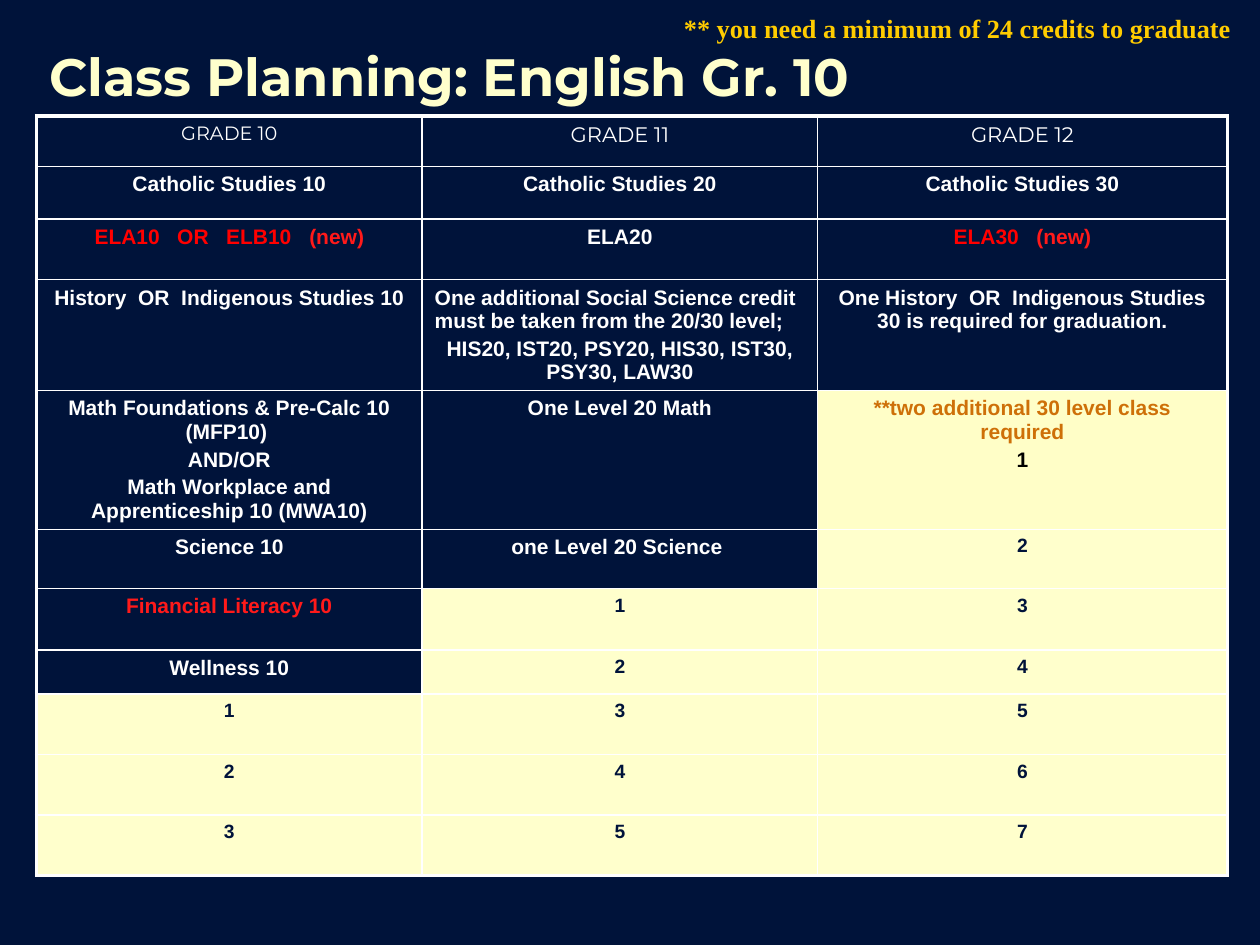
from lxml.etree import SubElement
from pptx import Presentation
from pptx.dml.color import RGBColor
from pptx.enum.text import MSO_ANCHOR, PP_ALIGN
from pptx.oxml.ns import qn
from pptx.util import Inches, Pt

NAVY, CREAM, PALE = "00133A", "FFFFCC", "FFFEC7"
WHITE, RED, BRIGHT_RED = "FFFFFF", "FF0000", "FF1A1A"
ORANGE, GOLD, BLACK = "CE7008", "FFCC00", "000000"

COLUMN_WIDTHS = [3.06, 3.14, 3.25]
ROW_HEIGHTS = [0.4, 0.42, 0.48, 0.88, 1.1, 0.47, 0.49, 0.35, 0.48, 0.48, 0.48]
GRADES = ["GRADE 10", "GRADE 11", "GRADE 12"]

# Required courses, one list per grade. A cell is a string or a list of
# paragraphs; a paragraph is a string or a list of (text, colour) spans.
COURSES = [
    ["Catholic Studies 10",
     [[("ELA10   OR   ELB10   ", RED), ("(new)", BRIGHT_RED)]],
     "History  OR  Indigenous Studies 10",
     ["Math Foundations & Pre-Calc 10 (MFP10)\u00a0", "AND/OR",
      "Math Workplace and Apprenticeship 10 (MWA10)"],
     "Science 10",
     [[("Financial Literacy 10", BRIGHT_RED)]],
     "Wellness 10"],
    ["Catholic Studies 20",
     "ELA20",
     ["One additional Social Science credit must be taken from the 20/30 level;",
      "HIS20, IST20, PSY20, HIS30, IST30, PSY30, LAW30"],
     "One Level 20 Math",
     "one Level 20 Science "],
    ["Catholic Studies 30",
     [[("ELA30   ", RED), ("(new)", BRIGHT_RED)]],
     "One History  OR  Indigenous Studies 30 is required for graduation.",
     [[("**two additional 30 level class required", ORANGE)], [("1", BLACK)]]],
]
FIRST_ELECTIVES = [1, 1, 2]  # the first Grade 12 elective shares a course cell


def color(value):
    return RGBColor.from_string(value)


def style_span(span, size, font, ink, bold=True):
    span.font.size = Pt(size)
    span.font.name = font
    span.font.bold = bold
    span.font.color.rgb = color(ink)


def space_before(para, percent):
    spacing = SubElement(para._p.get_or_add_pPr(), qn("a:spcBef"))
    SubElement(spacing, qn("a:spcPct"), val=str(percent * 1000))


def set_borders(cell, row, column):
    """Thin inner lines, thick lines along the outside of the table."""
    outer = {"lnL": column == 0, "lnR": column == len(COLUMN_WIDTHS) - 1,
             "lnT": row == 0, "lnB": row == len(ROW_HEIGHTS) - 1}
    properties = cell._tc.get_or_add_tcPr()
    for side, is_outer in outer.items():
        line = SubElement(properties, qn(f"a:{side}"), w=str(Pt(2.25 if is_outer else 1)))
        fill = SubElement(line, qn("a:solidFill"))
        SubElement(fill, qn("a:srgbClr"), val=WHITE)


def fill_cell(cell, content, size=12, font="Arial", ink=WHITE, bold=True, back=None):
    if back:
        cell.fill.solid()
        cell.fill.fore_color.rgb = color(back)
    else:
        cell.fill.background()
    frame = cell.text_frame
    paragraphs = [content] if isinstance(content, str) else content
    for index, spans in enumerate(paragraphs):
        para = frame.paragraphs[0] if index == 0 else frame.add_paragraph()
        para.alignment = PP_ALIGN.CENTER
        space_before(para, 20)
        for text, span_ink in [(spans, ink)] if isinstance(spans, str) else spans:
            span = para.add_run()
            span.text = text
            style_span(span, size, font, span_ink, bold)


def add_title(page, text):
    title = page.shapes.title
    title.left, title.top = Inches(0.29), Inches(0.4)
    title.width, title.height = Inches(8.5), Inches(0.52)
    frame = title.text_frame
    frame.text = text
    frame.vertical_anchor = MSO_ANCHOR.MIDDLE
    para = frame.paragraphs[0]
    para.alignment = PP_ALIGN.LEFT
    para.line_spacing = 0.7
    style_span(para.runs[0], 30, "Montserrat", CREAM)


def add_note(page, text):
    box = page.shapes.add_textbox(Inches(5.33), Inches(0.05), Inches(6.66), Inches(0.35))
    box.text_frame.word_wrap = True
    box.text_frame.text = text
    style_span(box.text_frame.paragraphs[0].runs[0], 15, "Times New Roman", GOLD)


def add_plan(page):
    table = page.shapes.add_table(
        len(ROW_HEIGHTS), len(COLUMN_WIDTHS), Inches(0.29), Inches(0.92),
        Inches(sum(COLUMN_WIDTHS)), Inches(sum(ROW_HEIGHTS))).table
    table.first_row = table.horz_banding = False
    for row, height in zip(table.rows, ROW_HEIGHTS):
        row.height = Inches(height)

    for column, courses in enumerate(COURSES):
        table.columns[column].width = Inches(COLUMN_WIDTHS[column])
        for row in range(len(ROW_HEIGHTS)):
            cell = table.cell(row, column)
            set_borders(cell, row, column)
            if row == 0:
                fill_cell(cell, GRADES[column], 11 if column == 0 else 12,
                          "Montserrat", bold=False)
            elif row <= len(courses):
                shared = column == 2 and row == len(courses)
                fill_cell(cell, courses[row - 1], back=PALE if shared else None)
            else:
                # Numbered electives fill the rest of each column
                number = row - len(courses) - 1 + FIRST_ELECTIVES[column]
                fill_cell(cell, str(number), 11, ink=NAVY, back=CREAM)

    # The social science rule reads from the left
    table.cell(3, 1).text_frame.paragraphs[0].alignment = PP_ALIGN.LEFT


def main():
    deck = Presentation()
    deck.slide_width, deck.slide_height = Inches(10), Inches(7.5)
    page = deck.slides.add_slide(deck.slide_layouts[5])
    page.background.fill.solid()
    page.background.fill.fore_color.rgb = color(NAVY)
    add_title(page, "Class Planning: English Gr. 10")
    add_plan(page)
    add_note(page, "** you need a minimum of 24 credits to graduate")
    deck.save("out.pptx")


if __name__ == "__main__":
    main()
